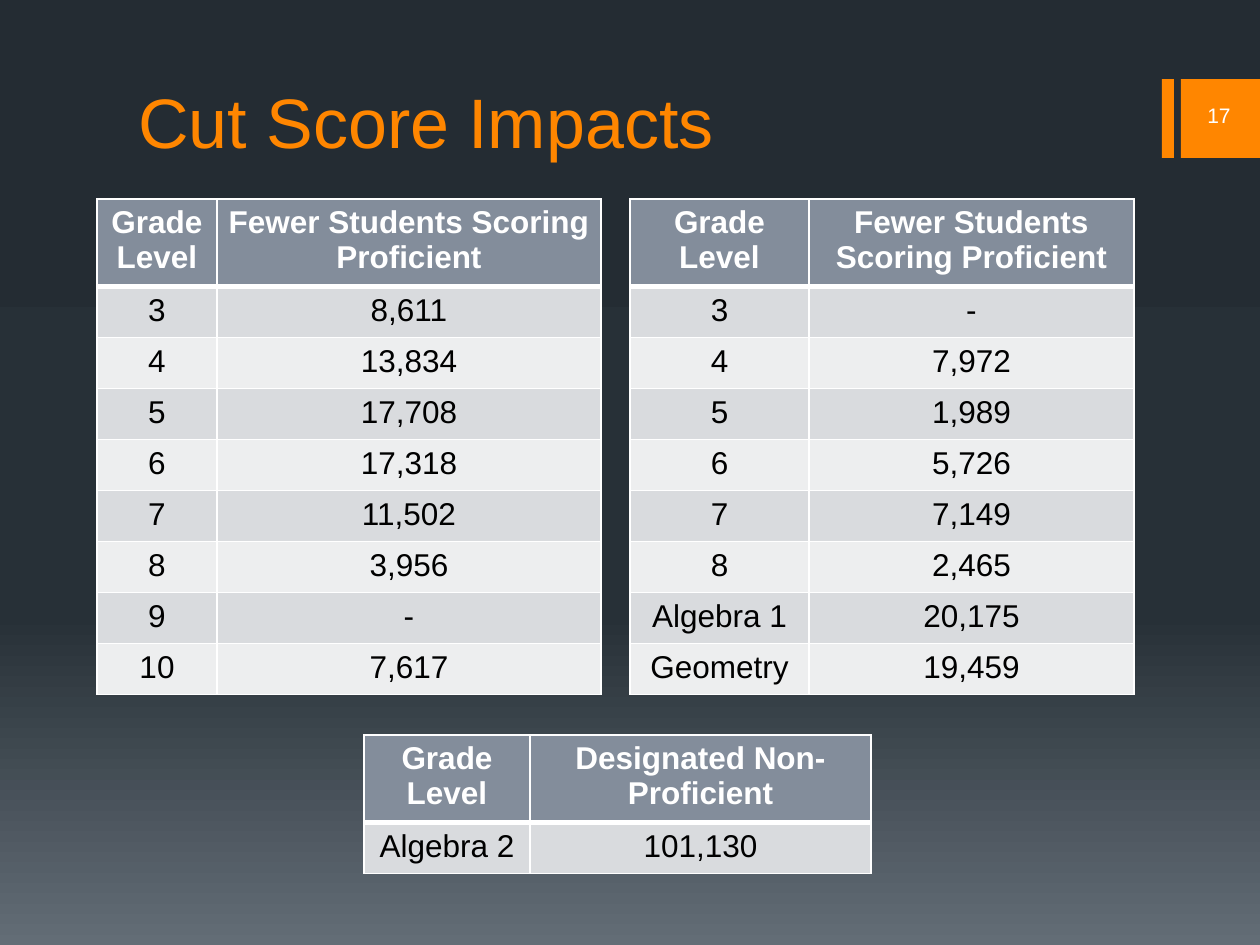
from lxml.etree import SubElement
from pptx import Presentation
from pptx.dml.color import RGBColor
from pptx.enum.shapes import MSO_SHAPE
from pptx.enum.text import MSO_ANCHOR, PP_ALIGN
from pptx.oxml.ns import qn
from pptx.util import Pt

EMU_PER_PX = 914400 / 126
FONT = "Arial"
ORANGE, WHITE, BLACK = "FF8600", "FFFFFF", "000000"
HEADER_FILL, BANDS = "838D9B", ("D9DBDE", "EDEEEF")
HEADER_H, ROW_H = 83, 51
GRADIENT = ((0, "242C33"), (65, "273037"), (100, "636D76"))

FEWER = ("Grade Level", "Fewer Students Scoring Proficient")
LEFT_ROWS = [
    FEWER, ("3", "8,611"), ("4", "13,834"), ("5", "17,708"), ("6", "17,318"),
    ("7", "11,502"), ("8", "3,956"), ("9", "-"), ("10", "7,617"),
]
RIGHT_ROWS = [
    FEWER, ("3", "-"), ("4", "7,972"), ("5", "1,989"), ("6", "5,726"),
    ("7", "7,149"), ("8", "2,465"), ("Algebra 1", "20,175"), ("Geometry", "19,459"),
]
ALGEBRA_2_ROWS = [("Grade Level", "Designated Non-Proficient"), ("Algebra 2", "101,130")]


def px(n):
    return round(n * EMU_PER_PX)


def rgb(color):
    return RGBColor.from_string(color)


def style(p, size, color, align, bold=False):
    p.alignment = align
    p.font.name = FONT
    p.font.size = Pt(size)
    p.font.bold = bold
    p.font.color.rgb = rgb(color)


def add_background(s):
    fill = s.background.fill
    fill.gradient()
    fill.gradient_angle = 270
    stops = s.element.find(".//" + qn("a:gsLst"))
    for stop in list(stops):
        stops.remove(stop)
    for pos, color in GRADIENT:
        stop = SubElement(stops, qn("a:gs"), pos=str(pos * 1000))
        SubElement(stop, qn("a:srgbClr"), val=color)


def add_bar(s, x, y, w, h):
    sp = s.shapes.add_shape(MSO_SHAPE.RECTANGLE, px(x), px(y), px(w), px(h))
    sp.shadow.inherit = False
    sp.fill.solid()
    sp.fill.fore_color.rgb = rgb(ORANGE)
    sp.line.fill.background()


def add_text(s, x, y, w, h, text, size, color, align, anchor):
    tf = s.shapes.add_textbox(px(x), px(y), px(w), px(h)).text_frame
    tf.word_wrap = True
    tf.vertical_anchor = anchor
    p = tf.paragraphs[0]
    p.text = text
    style(p, size, color, align)


def add_page_marker(s, x, y, h, number):
    """Narrow bar and square at the right edge, with the slide number."""
    add_bar(s, x, y, 12, h)
    add_bar(s, x + 19, y, h, h)
    add_text(s, x - 49, y + 15, 130, 42, number, 12, WHITE, PP_ALIGN.RIGHT, MSO_ANCHOR.MIDDLE)


def set_borders(cell, top, bottom):
    """White cell borders; the side ones are 1 pt wide."""
    tc_pr = cell._tc.get_or_add_tcPr()
    for tag, width in (("lnL", 1), ("lnR", 1), ("lnT", top), ("lnB", bottom)):
        ln = SubElement(tc_pr, qn("a:" + tag), w=str(Pt(width)))
        SubElement(SubElement(ln, qn("a:solidFill")), qn("a:srgbClr"), val=WHITE)


def add_score_table(s, x, y, col_widths, rows):
    height = HEADER_H + ROW_H * (len(rows) - 1)
    table = s.shapes.add_table(
        len(rows), len(col_widths), px(x), px(y), px(sum(col_widths)), px(height)).table
    for column, width in zip(table.columns, col_widths):
        column.width = px(width)
    for i, values in enumerate(rows):
        header = i == 0
        table.rows[i].height = px(HEADER_H if header else ROW_H)
        for j, value in enumerate(values):
            cell = table.cell(i, j)
            cell.margin_left = cell.margin_right = px(9)
            cell.margin_top = cell.margin_bottom = px(6)
            set_borders(cell, top=3 if i == 1 else 1, bottom=3 if header else 1)
            cell.fill.solid()
            cell.fill.fore_color.rgb = rgb(HEADER_FILL if header else BANDS[(i - 1) % 2])
            p = cell.text_frame.paragraphs[0]
            p.text = value
            style(p, 18, WHITE if header else BLACK, PP_ALIGN.CENTER, header)


def main():
    prs = Presentation()
    prs.slide_width, prs.slide_height = px(1260), px(945)
    s = prs.slides.add_slide(prs.slide_layouts[6])
    add_background(s)
    add_text(s, 126, 53, 1008, 116, "Cut Score Impacts", 40, ORANGE,
             PP_ALIGN.LEFT, MSO_ANCHOR.BOTTOM)
    add_score_table(s, 97, 199, (120, 384), LEFT_ROWS)
    add_score_table(s, 630, 199, (179, 325), RIGHT_ROWS)
    add_score_table(s, 364, 735, (166, 341), ALGEBRA_2_ROWS)
    add_page_marker(s, 1162, 79, 79, "17")
    prs.save("out.pptx")


if __name__ == "__main__":
    main()
